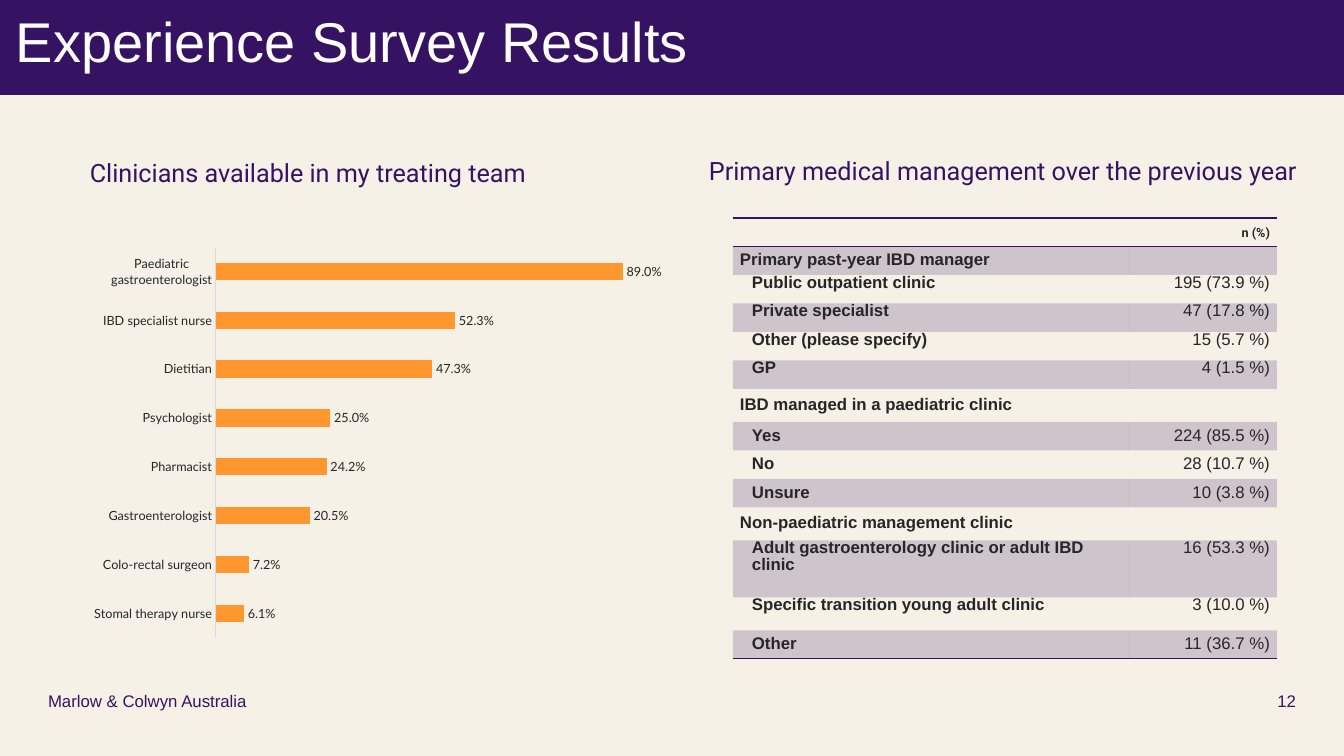
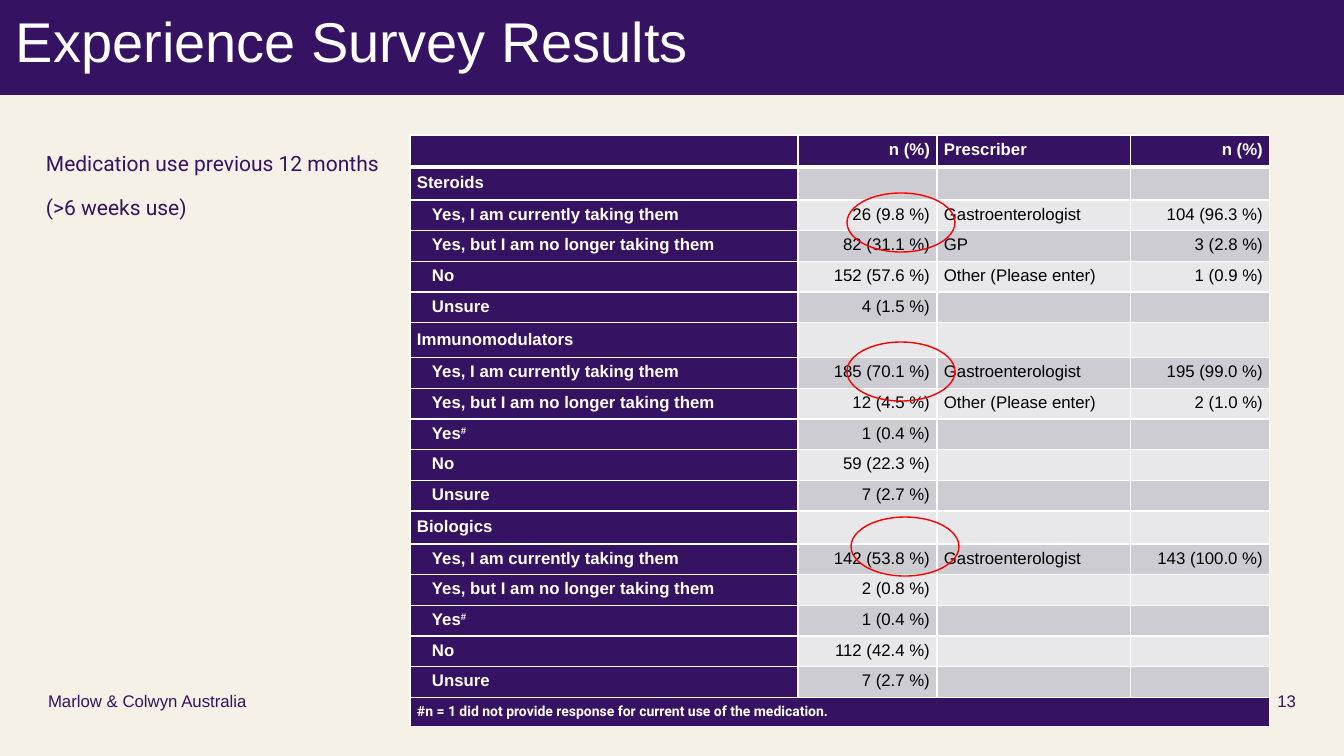
from lxml import etree
from pptx import Presentation
from pptx import util as u
from pptx.chart.data import CategoryChartData
from pptx.dml.color import RGBColor
from pptx.enum import chart as charts, shapes, text
from pptx.oxml.ns import qn

PURPLE = RGBColor(0x36, 0x12, 0x63)
CREAM = RGBColor(0xF5, 0xF1, 0xE7)
ORANGE = RGBColor(0xFF, 0x97, 0x2E)
INK = RGBColor(0x26, 0x26, 0x26)
AXIS_GREY = RGBColor(0xD9, 0xD9, 0xD9)
BAND_DARK = RGBColor(0xCE, 0xCC, 0xD3)
BAND_LIGHT = RGBColor(0xE8, 0xE7, 0xEA)
WHITE = RGBColor(0xFF, 0xFF, 0xFF)
BLACK = RGBColor(0, 0, 0)
RED = RGBColor(0xFF, 0, 0)

LEFT, CENTER, RIGHT = text.PP_ALIGN.LEFT, text.PP_ALIGN.CENTER, text.PP_ALIGN.RIGHT
TOP, MIDDLE, BOTTOM = text.MSO_ANCHOR.TOP, text.MSO_ANCHOR.MIDDLE, text.MSO_ANCHOR.BOTTOM
PLAIN_TABLE_STYLE = "{2D5ABB26-0587-4C30-8999-92F81FD0307C}"

WIDTH, HEIGHT = 1344, 756
TITLE = "Experience Survey Results"
FOOTER = "Marlow & Colwyn Australia"

CLINICIANS = [
    ("Stomal therapy nurse", 0.061),
    ("Colo-rectal surgeon", 0.072),
    ("Gastroenterologist", 0.205),
    ("Pharmacist", 0.242),
    ("Psychologist", 0.25),
    ("Dietitian", 0.473),
    ("IBD specialist nurse", 0.523),
    ("Paediatric gastroenterologist", 0.89),
]

# Each share is a count and a percentage; a row without one is a section heading.
MANAGEMENT = [
    ("Primary past-year IBD manager", None),
    ("Public outpatient clinic", (195, 73.9)),
    ("Private specialist", (47, 17.8)),
    ("Other (please specify)", (15, 5.7)),
    ("GP", (4, 1.5)),
    ("IBD managed in a paediatric clinic", None),
    ("Yes", (224, 85.5)),
    ("No", (28, 10.7)),
    ("Unsure", (10, 3.8)),
    ("Non-paediatric management clinic", None),
    ("Adult gastroenterology clinic or adult IBD clinic", (16, 53.3)),
    ("Specific transition young adult clinic", (3, 10.0)),
    ("Other", (11, 36.7)),
]
MANAGEMENT_TALL = {6: 33, 10: 33, 11: 57, 12: 33}
MANAGEMENT_TOP_ROWS = {2, 3, 4, 5, 11, 12}

CURRENT = "Yes, I am currently taking them"
STOPPED = "Yes, but I am no longer taking them"
SPECIALIST, OTHER = "Gastroenterologist", "Other (Please enter)"
MEDICATION = [
    ("Steroids", None, "", None),
    (CURRENT, (26, 9.8), SPECIALIST, (104, 96.3)),
    (STOPPED, (82, 31.1), "GP", (3, 2.8)),
    ("No", (152, 57.6), OTHER, (1, 0.9)),
    ("Unsure", (4, 1.5), "", None),
    ("Immunomodulators", None, "", None),
    (CURRENT, (185, 70.1), SPECIALIST, (195, 99.0)),
    (STOPPED, (12, 4.5), OTHER, (2, 1.0)),
    ("Yes#", (1, 0.4), "", None),
    ("No", (59, 22.3), "", None),
    ("Unsure", (7, 2.7), "", None),
    ("Biologics", None, "", None),
    (CURRENT, (142, 53.8), SPECIALIST, (143, 100.0)),
    (STOPPED, (2, 0.8), "", None),
    ("Yes#", (1, 0.4), "", None),
    ("No", (112, 42.4), "", None),
    ("Unsure", (7, 2.7), "", None),
]
MEDICATION_TALL = {0: 32, 1: 33, 6: 35, 12: 33, 18: 29}
MEDICATION_HEADER = ("", "n (%)", "Prescriber", "n (%)")
FOOTNOTE = "#n = 1 did not provide response for current use of the medication."
HIGHLIGHTS = [(847, 193), (847, 342), (851, 517)]


def px(length):
    return u.Emu(round(length * 12192000 / WIDTH))


def place(left, top, width, height):
    return px(left), px(top), px(width), px(height)


def set_font(font, size, color, name="Arial", bold=False):
    font.size, font.name, font.bold = u.Pt(size), name, bold
    font.color.rgb = color


def set_frame(frame, anchor, wrap=True):
    frame.margin_left = frame.margin_right = frame.margin_top = frame.margin_bottom = 0
    frame.vertical_anchor, frame.word_wrap = anchor, wrap
    frame.auto_size = text.MSO_AUTO_SIZE.NONE


def add_text(slide, lines, box, size, name="Arial", align=LEFT, anchor=MIDDLE, wrap=True, gap=0):
    frame = slide.shapes.add_textbox(*place(*box)).text_frame
    set_frame(frame, anchor, wrap)
    for index, line in enumerate(lines):
        para = frame.add_paragraph() if index else frame.paragraphs[0]
        para.text, para.alignment = line, align
        para.space_before = para.space_after = u.Pt(gap)
        set_font(para.font, size, PURPLE, name)


def add_page(deck, number):
    """Add a slide with the title band, footer and slide number."""
    slide = deck.slides.add_slide(deck.slide_layouts[5])
    title = slide.shapes.title
    title.left, title.top, title.width, title.height = place(0, 0, WIDTH, 95)
    title.fill.solid()
    title.fill.fore_color.rgb = PURPLE
    set_frame(title.text_frame, TOP)
    title.text_frame.margin_left = px(16)
    para = title.text_frame.paragraphs[0]
    para.text, para.alignment, para.line_spacing = TITLE, LEFT, 1.1
    set_font(para.font, 40, WHITE)
    add_text(slide, [FOOTER], (48, 675, 480, 36), 12, anchor=BOTTOM)
    add_text(slide, [str(number)], (1251, 675, 45, 36), 12, align=RIGHT, anchor=BOTTOM)
    return slide


def add_grid(slide, left, top, widths, height, count, tall):
    """Add an unstyled table; rows not named in tall share the remaining height."""
    frame = slide.shapes.add_table(count, len(widths), *place(left, top, sum(widths), height))
    table = frame.table
    table.first_row = table.horz_banding = False
    table._tbl.tblPr.find(qn("a:tableStyleId")).text = PLAIN_TABLE_STYLE
    for column, width in zip(table.columns, widths):
        column.width = px(width)
    plain = (height - sum(tall.values())) / (count - len(tall))
    for index, row in enumerate(table.rows):
        row.height = px(tall.get(index, plain))
    return table


def fill_cell(cell, fill, alpha=None):
    if fill is None:
        cell.fill.background()
        return
    cell.fill.solid()
    cell.fill.fore_color.rgb = fill
    if alpha:
        color = cell._tc.tcPr.find(".//" + qn("a:srgbClr"))
        etree.SubElement(color, qn("a:alpha"), val=str(alpha * 1000))


def border_cell(cell, color, **widths):
    """Draw borders in points on the sides L, R, T and B, after the fill is set."""
    sides = [side for side in "LRTB" if side in widths]
    for index, side in enumerate(sides):
        line = etree.Element(qn("a:ln" + side), w=str(u.Pt(widths[side])))
        fill = etree.SubElement(line, qn("a:solidFill"))
        etree.SubElement(fill, qn("a:srgbClr"), val=str(color))
        cell._tc.get_or_add_tcPr().insert(index, line)


def write_cell(cell, words, color, size=12, name="Arial", bold=False, align=LEFT,
               anchor=MIDDLE, indent=0, after=0):
    cell.margin_left, cell.margin_right = px(7 + indent), px(7)
    cell.margin_top = cell.margin_bottom = 0
    cell.vertical_anchor = anchor
    para = cell.text_frame.paragraphs[0]
    para.alignment, para.line_spacing, para.space_after = align, u.Pt(12), u.Pt(after)
    set_font(para.font, size, color, name, bold)
    if words:
        para.add_run().text = words.removesuffix("#")
    if words.endswith("#"):
        mark = para.add_run()
        mark.text = "#"
        mark._r.get_or_add_rPr().set("baseline", "30000")


def share_text(share):
    return f"{share[0]} ({share[1]} %)" if share else ""


def add_clinician_chart(slide):
    data = CategoryChartData(number_format="0.0%")
    data.categories = [name for name, _ in CLINICIANS]
    data.add_series("Series 1", [value for _, value in CLINICIANS])
    chart = slide.shapes.add_chart(
        charts.XL_CHART_TYPE.BAR_CLUSTERED, *place(82, 239, 603, 407), data).chart
    chart.has_legend = chart.has_title = False
    set_font(chart.font, 9, INK, "Lato")
    names, values = chart.category_axis, chart.value_axis
    names.major_tick_mark = names.minor_tick_mark = charts.XL_TICK_MARK.NONE
    names.format.line.color.rgb = AXIS_GREY
    names.format.line.width = u.Pt(0.75)
    values.visible = values.has_major_gridlines = False
    values.minimum_scale, values.maximum_scale = 0, 1
    plot = chart.plots[0]
    plot.gap_width, plot.vary_by_categories = 182, False
    bars = plot.series[0].format.fill
    bars.solid()
    bars.fore_color.rgb = ORANGE
    plot.has_data_labels = True
    labels = plot.data_labels
    labels.show_value = True
    labels.position = charts.XL_LABEL_POSITION.OUTSIDE_END
    labels.number_format, labels.number_format_is_linked = "0.0%", False
    set_font(labels.font, 9, INK, "Lato")


def add_management_table(slide):
    last = len(MANAGEMENT)
    table = add_grid(slide, 733, 218, (396, 148), 441, last + 1, MANAGEMENT_TALL)
    for column, words in enumerate(("", "n (%)")):
        cell = table.cell(0, column)
        write_cell(cell, words, INK, 9, "Roboto", True, RIGHT)
        fill_cell(cell, None)
        border_cell(cell, PURPLE, T=1, B=1)
    for row, (label, share) in enumerate(MANAGEMENT, 1):
        anchor = TOP if row in MANAGEMENT_TOP_ROWS else MIDDLE
        name, value = table.cell(row, 0), table.cell(row, 1)
        write_cell(name, label, INK, bold=True, anchor=anchor, indent=12 if share else 0)
        write_cell(value, share_text(share), INK, align=RIGHT, anchor=anchor)
        for cell in (name, value):
            fill_cell(cell, PURPLE if row % 2 else None, alpha=20)
            if row == last:
                border_cell(cell, PURPLE, B=1)


def add_medication_table(slide):
    last = len(MEDICATION) + 1
    table = add_grid(slide, 410, 135, (388, 139, 194, 139), 592, last + 1, MEDICATION_TALL)
    aligns = (LEFT, RIGHT, LEFT, RIGHT)
    rows = [MEDICATION_HEADER]
    rows += [(label, share_text(share), prescriber, share_text(prescribed))
             for label, share, prescriber, prescribed in MEDICATION]
    for row, entries in enumerate(rows):
        for column, words in enumerate(entries):
            cell = table.cell(row, column)
            heading = row == 0 or column == 0
            indent = 15 if column == 0 and entries[1] and row else 0
            write_cell(cell, words, WHITE if heading else BLACK, bold=heading,
                       align=aligns[column], indent=indent, after=8)
            fill_cell(cell, PURPLE if heading else BAND_DARK if row % 2 else BAND_LIGHT)
            border_cell(cell, WHITE, L=1, R=1, T=3 if row == 1 else 1, B=1 if row else 3)
    note = table.cell(last, 0)
    note.merge(table.cell(last, 3))
    write_cell(note, FOOTNOTE, WHITE, 10, "Roboto", True, after=8)
    fill_cell(note, PURPLE)
    border_cell(note, WHITE, L=1, R=1, T=1, B=1)


def add_highlight(slide, left, top):
    ring = slide.shapes.add_shape(shapes.MSO_SHAPE.OVAL, *place(left, top, 108, 59))
    ring.shadow.inherit = False
    ring.fill.background()
    ring.line.color.rgb = RED
    ring.line.width = u.Pt(1)


def main():
    deck = Presentation()
    deck.slide_width, deck.slide_height = px(WIDTH), px(HEIGHT)
    background = deck.slide_master.background.fill
    background.solid()
    background.fore_color.rgb = CREAM

    team = add_page(deck, 12)
    add_clinician_chart(team)
    for heading, box in (("Clinicians available in my treating team", (83, 151, 450, 42)),
                         ("Primary medical management over the previous year",
                          (703, 149, 600, 42))):
        add_text(team, [heading], box, 18, "Roboto", CENTER, wrap=False)
    add_management_table(team)

    medication = add_page(deck, 13)
    add_medication_table(medication)
    add_text(medication, ["Medication use previous 12 months", "(>6 weeks use)"],
             (46, 150, 355, 525), 15, "Roboto", anchor=TOP, gap=7)
    for left, top in HIGHLIGHTS:
        add_highlight(medication, left, top)
    deck.save("out.pptx")


if __name__ == "__main__":
    main()
